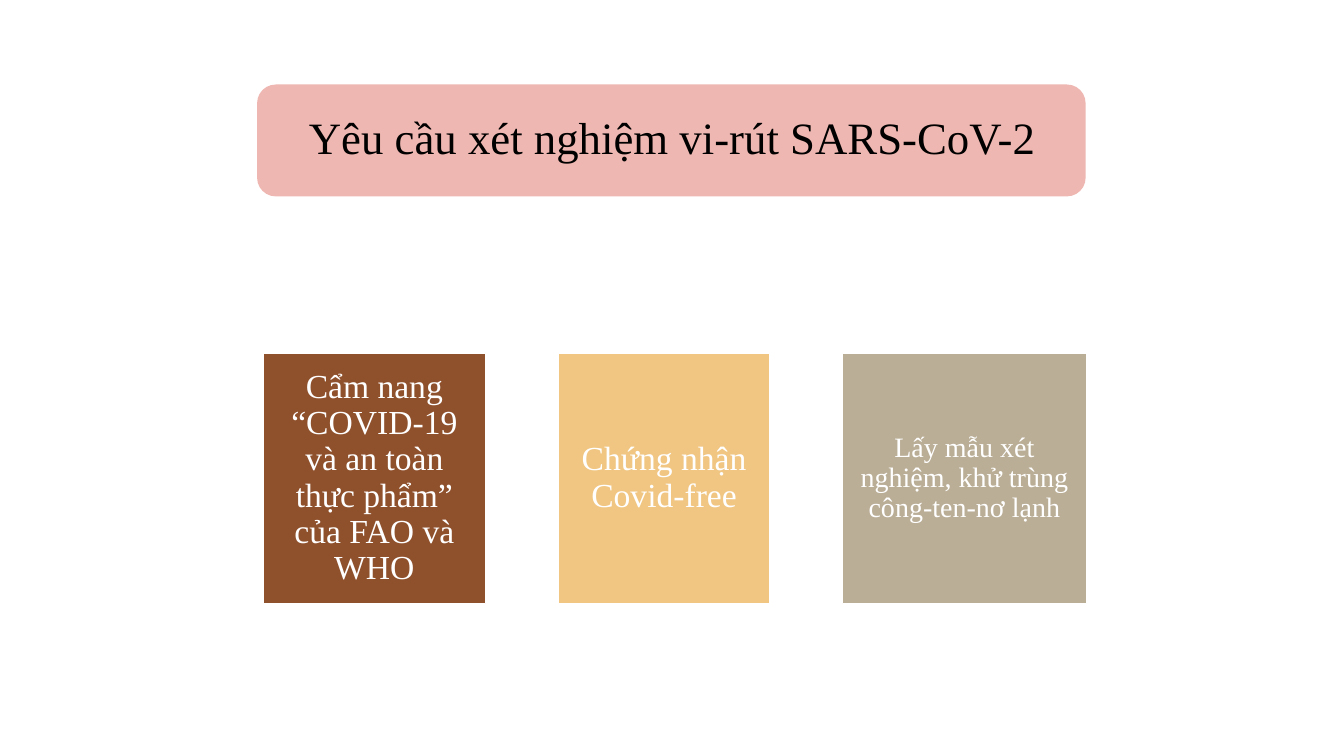
import pptx
import pptx.util
import pptx.dml.color
import pptx.enum.shapes
import pptx.enum.text

Cm, Pt = pptx.util.Cm, pptx.util.Pt
Kind = pptx.enum.shapes.MSO_SHAPE

FONT = "Times New Roman"
LEFT, TOP, HEIGHT, GAP = 6.63, 8.89, 6.32, 1.83
TILES = [
    (5.61, "8F502C", 24, "Cẩm nang “COVID-19 và an toàn thực phẩm” của FAO và WHO"),
    (5.33, "F0C682", 24, "Chứng nhận Covid-free"),
    (6.15, "BAAE97", 20, "Lấy mẫu xét nghiệm, khử trùng công-ten-nơ lạnh"),
]


def color(code):
    return pptx.dml.color.RGBColor.from_string(code)


def write(shape, text, size, ink, inset):
    """Put centred text into a shape, with equal insets in cm."""
    frame = shape.text_frame
    frame.text = text
    frame.word_wrap = True
    frame.auto_size = pptx.enum.text.MSO_AUTO_SIZE.NONE
    frame.vertical_anchor = pptx.enum.text.MSO_ANCHOR.MIDDLE
    frame.margin_left = frame.margin_right = Cm(inset)
    frame.margin_top = frame.margin_bottom = Cm(inset)
    line = frame.paragraphs[0]
    line.alignment = pptx.enum.text.PP_ALIGN.CENTER
    line.line_spacing = 0.9
    font = line.runs[0].font
    font.name = FONT
    font.size = Pt(size)
    font.color.rgb = color(ink)


def block(slide, kind, left, top, width, height, fill):
    shape = slide.shapes.add_shape(kind, Cm(left), Cm(top), Cm(width), Cm(height))
    shape.shadow.inherit = False
    shape.fill.solid()
    shape.fill.fore_color.rgb = color(fill)
    shape.line.fill.background()
    return shape


def header(slide, text):
    """Set the title on a rounded bar."""
    title = slide.shapes.title
    title.left, title.top = Cm(6.76), Cm(2.26)
    title.width, title.height = Cm(20.37), Cm(2.54)
    write(title, text, 32, "000000", 0.41)
    bar = block(slide, Kind.ROUNDED_RECTANGLE, 6.48, 2.13, 20.88, 2.82, "EFB7B1")
    title.element.addprevious(bar.element)


def tile(slide, left, width, fill, size, text):
    shape = block(slide, Kind.RECTANGLE, left, TOP, width, HEIGHT, fill)
    shape.line.color.rgb = color("FFFFFF")
    shape.line.width = Pt(1.25)
    write(shape, text, size, "FFFFFF", 0.25)


def main():
    deck = pptx.Presentation()
    deck.slide_width, deck.slide_height = Cm(33.87), Cm(19.05)
    slide = deck.slides.add_slide(deck.slide_layouts.get_by_name("Title Only"))
    header(slide, "Yêu cầu xét nghiệm vi-rút SARS-CoV-2")
    left = LEFT
    for width, fill, size, text in TILES:
        tile(slide, left, width, fill, size, text)
        left += width + GAP
    deck.save("out.pptx")


if __name__ == "__main__":
    main()
